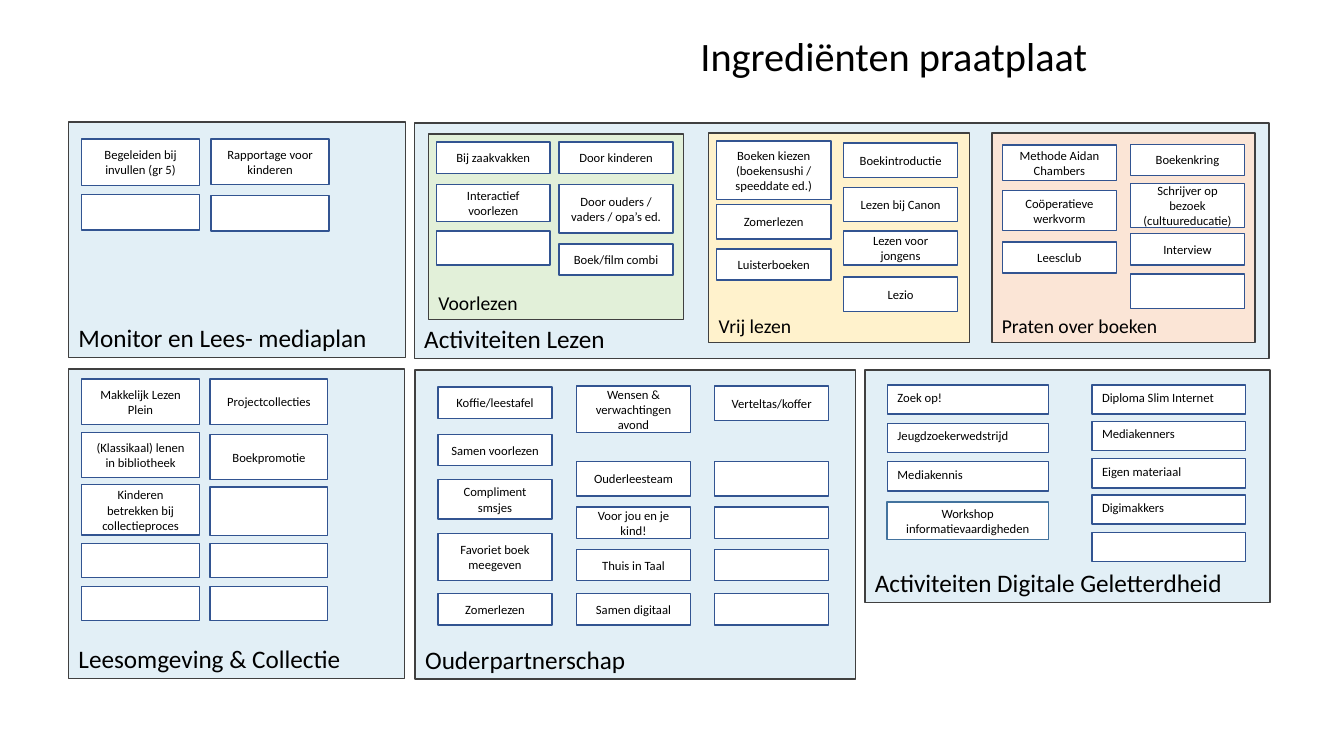
from pptx import Presentation
from pptx.util import Pt
from pptx.dml.color import RGBColor as RGB
from pptx.enum.shapes import MSO_SHAPE as Shape
from pptx.enum.text import MSO_ANCHOR as Anchor, PP_ALIGN as Align

THEME = {
    "font": "Calibri", "ink": "000000", "card": "FFFFFF",
    "edge": "404040", "rim": "325491", "steel": "43739E",
    "blue": "E2EFF6", "green": "E2F0D9", "sand": "FFF2CC", "peach": "FBE5D6",
    "title": 28.8, "head": 18, "sub": 14, "body": 9,
}


def write(frame, text, size, align, anchor):
    frame.word_wrap = True
    frame.vertical_anchor = anchor
    frame.text = text
    for para in frame.paragraphs:
        para.alignment = align
        para.font.name = THEME["font"]
        para.font.size = Pt(THEME[size])
        para.font.color.rgb = RGB.from_string(THEME["ink"])


def box(group, area, fill, line, text, size="body",
        align=Align.CENTER, anchor=Anchor.MIDDLE):
    shape = group.shapes.add_shape(Shape.RECTANGLE, *map(Pt, area))
    shape.shadow.inherit = False
    shape.fill.solid()
    shape.fill.fore_color.rgb = RGB.from_string(THEME[fill])
    shape.line.color.rgb = RGB.from_string(THEME[line])
    shape.line.width = Pt(1)
    if text:
        write(shape.text_frame, text, size, align, anchor)


# Boards: name, area, fill, heading size, columns
# Column: left, width, cards; card: top, height, text
BOARDS = [
    ("Ouderpartnerschap", (296.6, 264.2, 314.6, 221), "blue", "head", [
        (312.9, 81.4, [
            (276.5, 22.3, "Koffie/leestafel"),
            (310.3, 22.3, "Samen voorlezen"),
            (342.7, 28.1, "Compliment smsjes"),
            (380.9, 33.8, "Favoriet boek meegeven"),
            (424.1, 22.3, "Zomerlezen")]),
        (411.8, 81.4, [
            (275.8, 33.1, "Wensen & verwachtingen avond"),
            (329.8, 24.5, "Ouderleesteam"),
            (362.2, 22.3, "Voor jou en je kind!"),
            (392.4, 22.3, "Thuis in Taal"),
            (424.1, 22.3, "Samen digitaal")]),
        (510.5, 81.4, [
            (275.8, 24.5, "Verteltas/koffer"),
            (329.8, 24.5, ""), (362.2, 22.3, ""),
            (392.4, 22.3, ""), (424.1, 22.3, "")]),
    ]),
    ("Leesomgeving & Collectie", (49, 263.5, 239.8, 221), "blue", "head", [
        (58.3, 84.2, [
            (270.7, 32.4, "Makkelijk Lezen Plein"),
            (308.9, 32.4, "(Klassikaal) lenen in bibliotheek"),
            (346.3, 36, "Kinderen betrekken bij collectieproces"),
            (388.1, 24.5, ""), (419, 24.5, "")]),
        (150, 84.2, [
            (270.7, 32.4, "Projectcollecties"),
            (310.3, 32.4, "Boekpromotie"),
            (347.8, 34.6, ""), (388.1, 24.5, ""), (419, 24.5, "")]),
    ]),
    ("Monitor en Lees- mediaplan", (49, 87.1, 240.5, 168.5), "blue", "head", [
        (58.3, 84.2, [
            (99.4, 33.1, "Begeleiden bij invullen (gr 5)"), (139, 25.2, "")]),
        (150.8, 84.2, [
            (99.4, 32.4, "Rapportage voor kinderen"), (139.7, 25.2, "")]),
    ]),
    ("Activiteiten Lezen", (295.9, 87.8, 610.6, 168.5), "blue", "head", []),
    ("Praten over boeken", (708.5, 95, 187.9, 149.8), "peach", "sub", [
        (716, 81.4, [
            (103.7, 25.2, "Methode Aidan Chambers"),
            (136.1, 28.8, "Coöperatieve werkvorm"),
            (172.8, 22.3, "Leesclub")]),
        (807.5, 81.4, [
            (103, 22.3, "Boekenkring"),
            (131, 31.7, "Schrijver op bezoek\n(cultuureducatie)"),
            (167, 22.3, "Interview"),
            (195.8, 24.5, "")]),
    ]),
    ("Voorlezen", (306, 95.8, 182.2, 132.5), "green", "sub", [
        (311.6, 81.4, [
            (101.5, 22.3, "Bij zaakvakken"),
            (131.8, 26.6, "Interactief voorlezen"),
            (164.9, 24.5, "")]),
        (399.2, 81.7, [
            (101.5, 22.3, "Door kinderen"),
            (131.8, 34.6, "Door ouders / vaders / opa’s ed."),
            (174.2, 22.3, "Boek/film combi")]),
    ]),
    ("Vrij lezen", (506.2, 95, 186.5, 149.8), "sand", "sub", [
        (511.6, 82, [
            (100.8, 41.8, "Boeken kiezen\n(boekensushi / speeddate ed.)"),
            (146.2, 24.5, "Zomerlezen"),
            (177.8, 22.3, "Luisterboeken")]),
        (602.6, 81.4, [
            (102.2, 24.5, "Boekintroductie"),
            (133.9, 24.5, "Lezen bij Canon"),
            (164.9, 24.5, "Lezen voor jongens"),
            (198, 24.5, "Lezio")]),
    ]),
    ("Activiteiten Digitale Geletterdheid", (617.8, 264.2, 289.4, 166.3),
     "blue", "head", [
        (634, 115.2, [
            (275, 20.9, "Zoek op!"),
            (302.4, 20.9, "Jeugdzoekerwedstrijd"),
            (329.8, 20.9, "Mediakennis")]),
        (780.1, 109.8, [
            (275, 20.9, "Diploma Slim Internet"),
            (301, 20.9, "Mediakenners"),
            (327.6, 20.9, "Eigen materiaal"),
            (353.5, 20.9, "Digimakkers"),
            (380.2, 20.9, "")]),
    ]),
]

deck = Presentation()
deck.slide_width, deck.slide_height = Pt(960), Pt(540)
slide = deck.slides.add_slide(deck.slide_layouts[6])

# Title
title = slide.shapes.add_textbox(Pt(493.2), Pt(22.3), Pt(442.8), Pt(38.9))
write(title.text_frame, "Ingrediënten praatplaat", "title", Align.LEFT, Anchor.MIDDLE)
title.text_frame.paragraphs[0].line_spacing = 0.9

# Boards and cards; smaller boards join the group of the large one before them
for name, area, fill, size, cols in BOARDS:
    if size == "head":
        group = slide.shapes.add_group_shape()
    box(group, area, fill, "edge", name, size, Align.LEFT, Anchor.BOTTOM)
    if "Digitale" in name:
        align, anchor = Align.LEFT, Anchor.TOP
    else:
        align, anchor = Align.CENTER, Anchor.MIDDLE
    for left, width, cards in cols:
        for top, height, text in cards:
            box(group, (left, top, width, height), "card", "rim", text,
                align=align, anchor=anchor)

# Workshop card, centred on the last board
box(group, (633.6, 358.6, 115.2, 26.6), "card", "steel",
    "Workshop informatievaardigheden")

deck.save("out.pptx")
